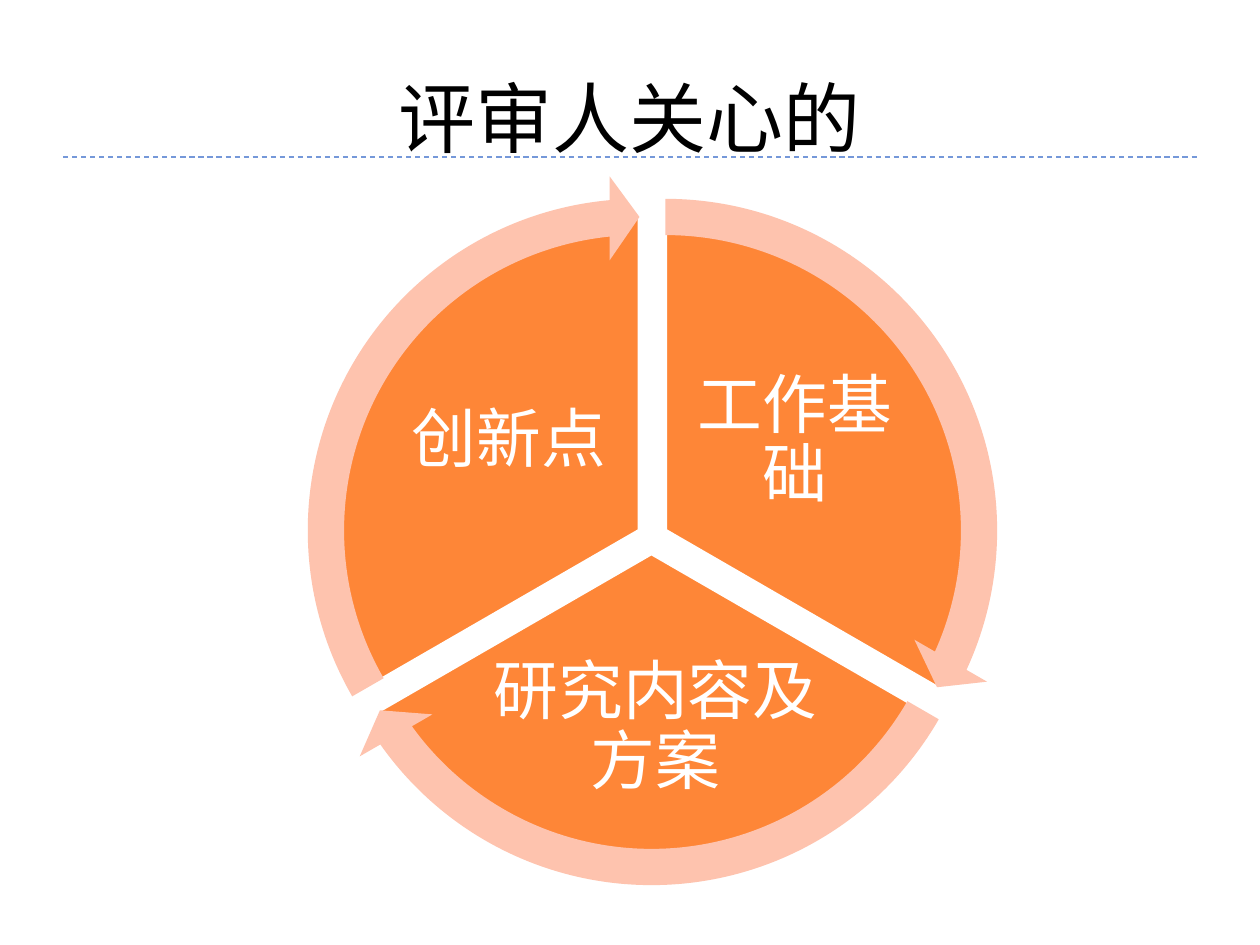
from dataclasses import dataclass

from lxml.etree import SubElement
from pptx import Presentation
from pptx.dml.color import RGBColor as RGB
from pptx.enum.dml import MSO_LINE_DASH_STYLE as Dash
from pptx.enum.shapes import MSO_CONNECTOR as Connector, MSO_SHAPE as Shape
from pptx.enum.text import MSO_ANCHOR as Anchor, PP_ALIGN as Align
from pptx.oxml.ns import qn
from pptx.util import Emu, Pt

SCALE = 914400 / 126  # EMU per px


@dataclass(frozen=True)
class Theme:
    font: str = "Arial"
    title_size: int = 44
    label_size: int = 37
    title: RGB = RGB(0x00, 0x00, 0x00)
    rule: RGB = RGB(0x75, 0x98, 0xD9)
    sector: RGB = RGB(0xFE, 0x86, 0x37)
    arrow: RGB = RGB(0xFE, 0xC3, 0xAE)
    white: RGB = RGB(0xFF, 0xFF, 0xFF)


THEME = Theme()
SECTOR_SIZE = 633
ARROW_SIZE = 711
SWEEP = 120  # degrees covered by one sector
ARROW_GAP = 5.46  # degrees between the arrow's end and the sector's end
ANGLE_UNIT = 0.6  # adjustment value per degree

# label, sector's left and top, label box
SECTORS = [
    ("工作基础", (349, 214), (682, 348, 226, 188)),
    ("研究内容及方案", (335, 237), (486, 646, 339, 165)),
    ("创新点", (323, 214), (396, 348, 226, 188)),
]


def px(value):
    return Emu(round(value * SCALE))


def add_text(shapes, text, box, size, color, inset):
    frame = shapes.add_textbox(*map(px, box)).text_frame
    frame.word_wrap = True
    frame.vertical_anchor = Anchor.MIDDLE
    frame.margin_left = frame.margin_right = px(inset)
    frame.margin_top = frame.margin_bottom = px(inset)
    line = frame.paragraphs[0]
    line.text = text
    line.alignment = Align.CENTER
    line.font.name = THEME.font
    line.font.size = Pt(size)
    line.font.color.rgb = color
    return line


def add_rule(slide, left, right, y):
    rule = slide.shapes.add_connector(
        Connector.STRAIGHT, px(left), px(y), px(right), px(y))
    rule.line.color.rgb = THEME.rule
    rule.line.width = Pt(0.75)
    rule.line.dash_style = Dash.DASH
    SubElement(rule._element.spPr, qn("a:effectLst"))


def add_round(shapes, kind, corner, size, color, adjustments):
    left, top = corner
    part = shapes.add_shape(kind, px(left), px(top), px(size), px(size))
    part.shadow.inherit = False
    part.fill.solid()
    part.fill.fore_color.rgb = color
    part.line.fill.background()
    for index, value in enumerate(adjustments):
        part.adjustments[index] = value
    return part


def start_angle(index):
    return (270 + SWEEP * index) % 360


def add_sector(shapes, index, corner):
    start = start_angle(index)
    end = (start + SWEEP) % 360
    sector = add_round(shapes, Shape.PIE, corner, SECTOR_SIZE, THEME.sector,
                       (start * ANGLE_UNIT, end * ANGLE_UNIT))
    sector.line.color.rgb = THEME.white
    sector.line.width = Pt(2)


def add_arrow(shapes, index, corner):
    start = start_angle(index)
    end = (start + SWEEP - ARROW_GAP) % 360
    overhang = (ARROW_SIZE - SECTOR_SIZE) / 2
    add_round(shapes, Shape.CIRCULAR_ARROW, [at - overhang for at in corner],
              ARROW_SIZE, THEME.arrow,
              (0.051, 3.275, end * ANGLE_UNIT, start * ANGLE_UNIT, 0.059))


def main():
    deck = Presentation()
    deck.slide_width, deck.slide_height = px(1260), px(945)
    slide = deck.slides.add_slide(deck.slide_layouts[6])

    # Heading
    add_rule(slide, 63, 1197, 157)
    add_text(slide.shapes, "评审人关心的", (63, 38, 1134, 157),
             THEME.title_size, THEME.title, 6)

    # Cycle: labelled sectors, then the arrows around them
    cycle = slide.shapes.add_group_shape().shapes
    for index, (label, corner, box) in enumerate(SECTORS):
        add_sector(cycle, index, corner)
        line = add_text(cycle, label, box, THEME.label_size, THEME.white, 6)
        line.line_spacing = 0.9
    for index, (_, corner, _) in enumerate(SECTORS):
        add_arrow(cycle, index, corner)

    deck.save("out.pptx")


if __name__ == "__main__":
    main()
